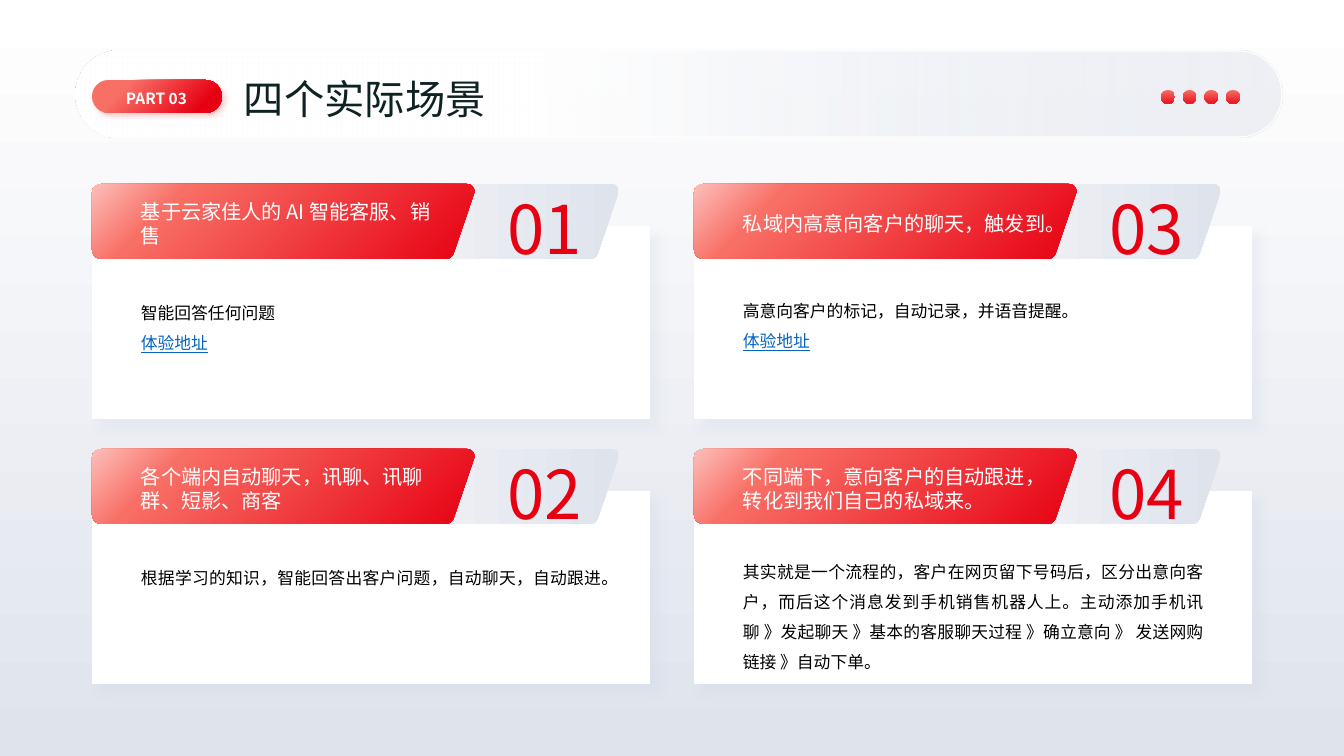
from lxml import etree
from pptx import Presentation
from pptx.dml.color import RGBColor
from pptx.enum.shapes import MSO_SHAPE
from pptx.enum.text import MSO_ANCHOR, PP_ALIGN
from pptx.oxml.ns import qn
from pptx.util import Pt

RECT, PILL, OVAL = MSO_SHAPE.RECTANGLE, MSO_SHAPE.ROUNDED_RECTANGLE, MSO_SHAPE.OVAL
TOP, MIDDLE = MSO_ANCHOR.TOP, MSO_ANCHOR.MIDDLE
LEFT, CENTER, RIGHT, JUSTIFY = PP_ALIGN.LEFT, PP_ALIGN.CENTER, PP_ALIGN.RIGHT, PP_ALIGN.JUSTIFY

WHITE = RGBColor(0xFF, 0xFF, 0xFF)
BLACK = RGBColor(0, 0, 0)
INK = RGBColor(0x0E, 0x22, 0x23)
MIST = RGBColor(0xDF, 0xE3, 0xEC)
SLATE = RGBColor(0xC5, 0xCC, 0xDD)
RED = RGBColor(0xE7, 0x00, 0x12)
DOT_RED = RGBColor(0xEB, 0x1B, 0x26)
CORAL = RGBColor(0xF8, 0x6F, 0x66)
BLUSH = RGBColor(0xFC, 0xBF, 0xBA)
LINK_BLUE = RGBColor(0x05, 0x63, 0xC1)

FONT = "Noto Sans CJK SC"
HEADING = "四个实际场景"
PART = "PART 03"
LINK = "体验地址"
SCENES = [
    {"number": "01", "title": "基于云家佳人的 AI 智能客服、销售", "title_width": 310,
     "body": ["智能回答任何问题", LINK], "body_top": 104},
    {"number": "02", "title": "各个端内自动聊天，讯聊、讯聊群、短影、商客", "title_width": 310,
     "body": ["根据学习的知识，智能回答出客户问题，自动聊天，自动跟进。"], "body_top": 104},
    {"number": "03", "title": "私域内高意向客户的聊天，触发到。", "title_width": 333,
     "body": ["高意向客户的标记，自动记录，并语音提醒。", LINK], "body_top": 102},
    {"number": "04", "title": "不同端下，意向客户的自动跟进，转化到我们自己的私域来。", "title_width": 310,
     "body": ["其实就是一个流程的，客户在网页留下号码后，区分出意向客户，而后这个消息发到"
              "手机销售机器人上。主动添加手机讯聊 》发起聊天 》基本的客服聊天过程 》确立意向 》 "
              "发送网购链接 》自动下单。"], "body_top": 98},
]

GRID_LEFT, GRID_TOP, COLUMN_PITCH, ROW_PITCH = 92, 184, 602, 265
TAB_CORNERS = [
    [(375, 0), (380, 0), (384, 5), (382, 10)],
    [(362, 69), (361, 72), (358, 75), (355, 75)],
    [(10, 75), (4, 75), (0, 71), (0, 65)],
    [(0, 9), (0, 4), (4, 0), (10, 0)],
]
CORNER_STEPS = 8
PX = 914400 / 100.8


def px(length):
    return round(length * PX)


def add_color(parent, color, alpha):
    node = etree.SubElement(parent, qn("a:srgbClr"), val=str(color))
    if alpha < 100:
        etree.SubElement(node, qn("a:alpha"), val=str(alpha * 1000))


def paint(fill, element, stops, clockwise):
    fill.gradient()
    fill.gradient_angle = -clockwise % 360
    stop_list = element.xpath(".//a:gsLst")[0]
    for old in list(stop_list):
        stop_list.remove(old)
    for position, color, alpha in stops:
        stop = etree.SubElement(stop_list, qn("a:gs"), pos=str(position * 1000))
        add_color(stop, color, alpha)


def add_plain(kind, left, top, width, height):
    shape = slide.shapes.add_shape(kind, px(left), px(top), px(width), px(height))
    shape.shadow.inherit = False
    shape.line.fill.background()
    if kind == PILL:
        shape.adjustments[0] = 0.5
    return shape


def add_shadow(shape, color, blur, distance):
    effects = shape.element.spPr.find(qn("a:effectLst"))
    shadow = etree.SubElement(effects, qn("a:outerShdw"), blurRad=str(Pt(blur)),
                              dist=str(Pt(distance)), dir="2700000", algn="tl", rotWithShape="0")
    add_color(shadow, color, 20)


def add_text(lines, box, size, color, spacing, align=LEFT, anchor=TOP, bold=False):
    frame = slide.shapes.add_textbox(*map(px, box)).text_frame
    frame.word_wrap = True
    frame.vertical_anchor = anchor
    frame.text = "\n".join(lines)
    for paragraph in frame.paragraphs:
        paragraph.alignment = align
        paragraph.line_spacing = Pt(spacing)
        for run in paragraph.runs:
            run.font.size = Pt(size)
            run.font.name = FONT
            run.font.bold = bold
            run.font.color.rgb = color
            etree.SubElement(run.font.color and run._r.get_or_add_rPr(), qn("a:ea"), typeface=FONT)
            if run.text == LINK:
                run.font.color.rgb = LINK_BLUE
                run.font.underline = True


def tab_outline():
    for corner in TAB_CORNERS:
        for step in range(CORNER_STEPS + 1):
            t = step / CORNER_STEPS
            weights = ((1 - t) ** 3, 3 * t * (1 - t) ** 2, 3 * t * t * (1 - t), t ** 3)
            yield tuple(px(sum(w * p[axis] for w, p in zip(weights, corner))) for axis in (0, 1))


def add_tab(left, top, stops, clockwise):
    points = list(tab_outline())
    builder = slide.shapes.build_freeform(*points[0])
    builder.add_line_segments(points[1:], close=True)
    tab = builder.convert_to_shape(px(left), px(top))
    tab.shadow.inherit = False
    tab.line.fill.background()
    paint(tab.fill, tab.element, stops, clockwise)


def add_scene(scene, left, top):
    card = add_plain(RECT, left, top + 42, 558, 193)
    card.fill.solid()
    card.fill.fore_color.rgb = WHITE
    add_shadow(card, SLATE, 8, 8)
    add_tab(left + 144, top, [(0, WHITE, 100), (100, MIST, 100)], 0)
    add_tab(left, top, [(0, RED, 100), (79, CORAL, 100), (100, BLUSH, 100)], 225)
    add_text(scene["body"], (left + 39, top + scene["body_top"], 481, 72), 12, BLACK, 21.5, JUSTIFY)
    add_text([scene["title"]], (left + 39, top + 7, scene["title_width"], 65),
             14.4, WHITE, 17.2, anchor=MIDDLE)
    add_text([scene["number"]], (left + 382, top - 8, 118, 92), 48, RED, 62, RIGHT)


prs = Presentation()
prs.slide_width, prs.slide_height = px(1344), px(756)
slide = prs.slides.add_slide(prs.slide_layouts[6])
paint(slide.background.fill, slide.element, [(0, WHITE, 100), (100, MIST, 100)], 90)

banner = add_plain(PILL, 76, 51, 1206, 86)
paint(banner.fill, banner.element, [(38, WHITE, 100), (100, MIST, 50)], 0)
banner.line.color.rgb = WHITE
banner.line.width = Pt(0.75)
add_text([HEADING], (234, 54, 424, 74), 28.8, INK, 45, anchor=MIDDLE)

for index in range(4):
    dot = add_plain(OVAL, 1161 + index * 65 / 3, 90, 14, 14)
    paint(dot.fill, dot.element, [(0, CORAL, 100), (88, DOT_RED, 100)], 90)

for index, scene in enumerate(SCENES):
    column, row = divmod(index, 2)
    add_scene(scene, GRID_LEFT + column * COLUMN_PITCH, GRID_TOP + row * ROW_PITCH)

badge = add_plain(PILL, 92, 80, 130, 33)
paint(badge.fill, badge.element, [(25, CORAL, 100), (84, RED, 100)], 45)
add_shadow(badge, RED, 4, 3)
add_text([PART], (104, 86, 105, 21), 11, WHITE, 16, CENTER, MIDDLE, True)

prs.save("out.pptx")
